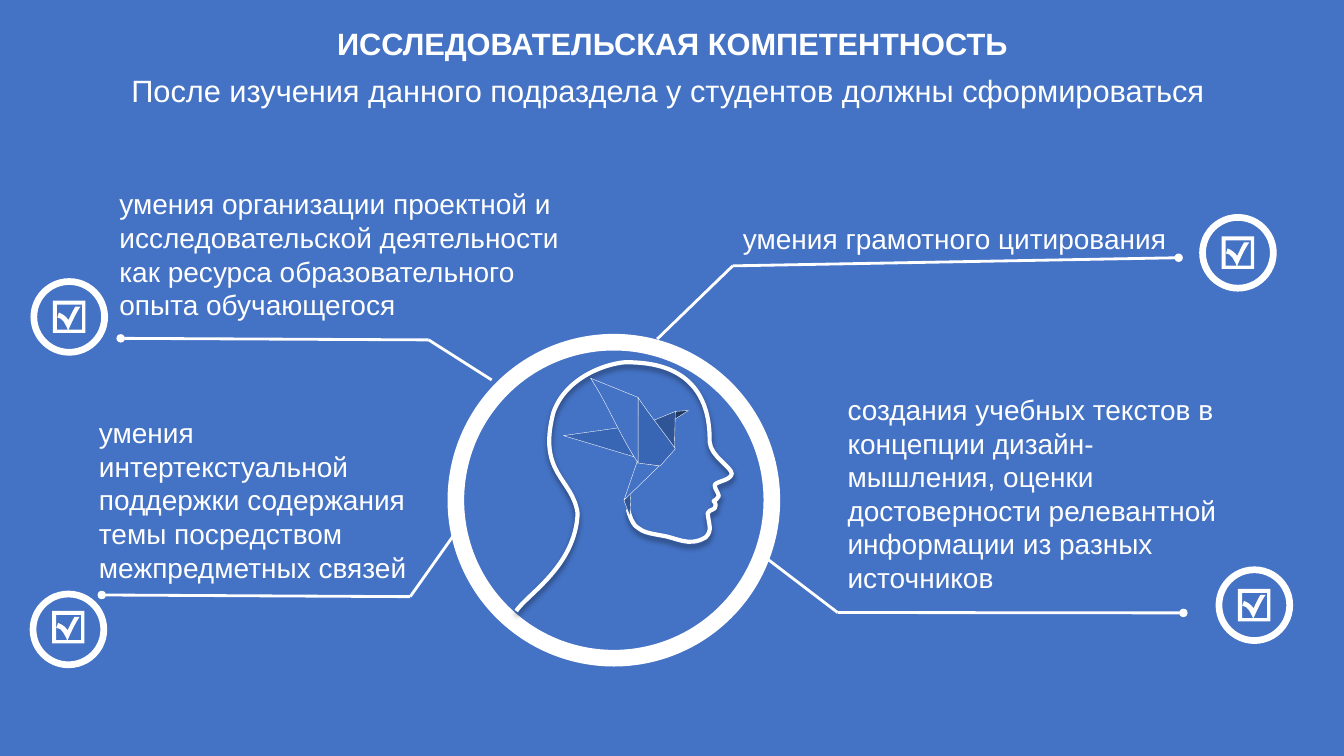
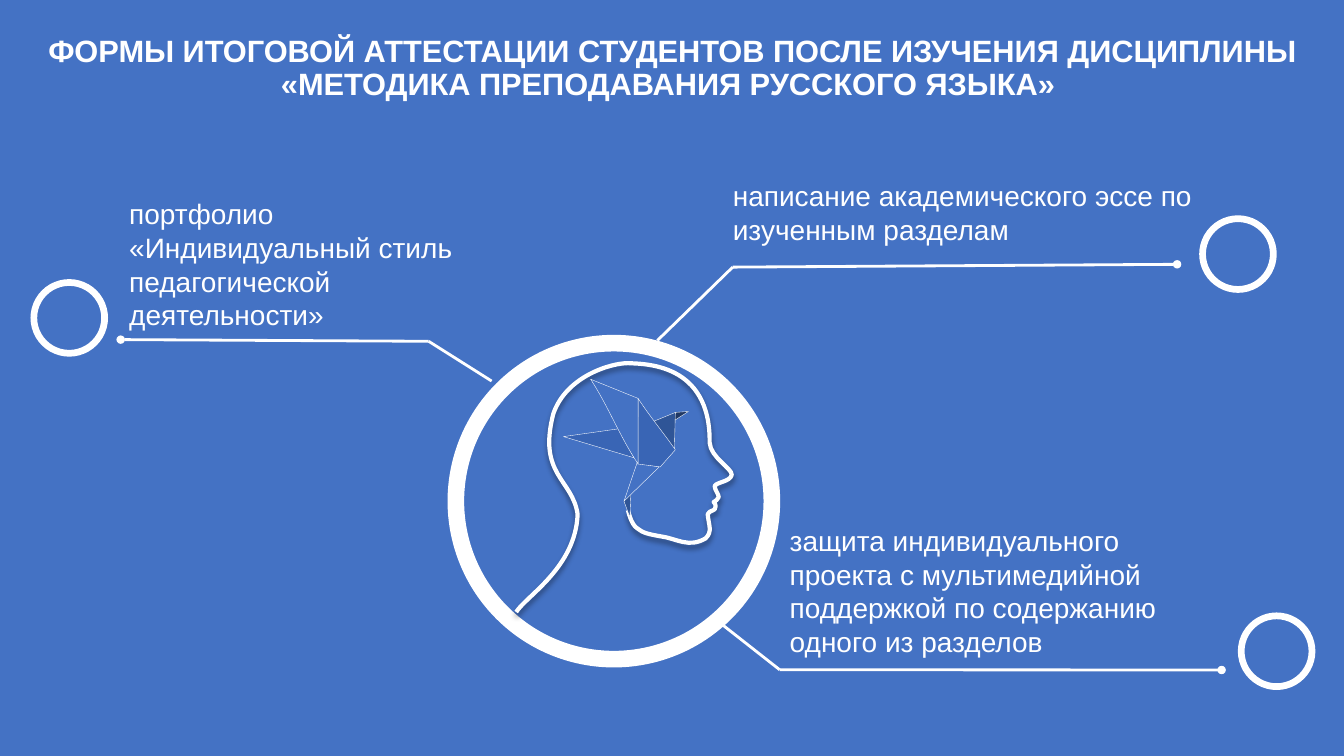
from dataclasses import dataclass
from typing import NamedTuple, Optional

from lxml import etree
from pptx import Presentation
from pptx import util as u
from pptx.dml import color
from pptx.enum import shapes as es
from pptx.enum import text as et
from pptx.oxml import ns


@dataclass(frozen=True)
class Theme:
    back: str = "4472C4"
    ink: str = "FFFFFF"
    mid: str = "3965B5"
    dark: str = "2F5597"
    deep: str = "203864"
    font: str = "Arial"
    title_size: float = 22
    body_size: float = 20
    leader_width: float = 2
    head_width: float = 3
    facet_width: float = 0.25


class Point(NamedTuple):
    x: float
    y: float


class Box(NamedTuple):
    left: float
    top: float
    width: float
    height: float


class Leader(NamedTuple):
    dot: Point
    elbow: Point
    end: Point


class Facet(NamedTuple):
    fill: str
    points: list


@dataclass(frozen=True)
class Item:
    text: str
    box: Box
    leader: Leader
    badge: Point
    check_dy: Optional[float] = None  # no check mark when None


@dataclass(frozen=True)
class Page:
    title: list  # (text, bold) per paragraph
    ring_top: float
    items: list


THEME = Theme()
TITLE_BOX = Box(20.9, 6.2, 918.7, 86.4)
RING_LEFT, RING_SIZE, RING_BAND = 319.7, 237.6, 0.05
BADGE_SIZE, BADGE_BAND, CHECK_DX = 55.4, 0.087, 16

# Outlines: a pair is a line to that point, six numbers are a Bezier curve.
# The head and the bird are measured from the ring's top left corner.
HEAD = [
    (128.9, 125.3), (128.9, 125.3, 131, 135.4, 135.4, 138.2),
    (139.7, 141.8, 144.7, 142.6, 152.6, 144),
    (163.4, 145.4, 172.1, 152.6, 184.3, 145.4),
    (189.4, 140.4, 186.5, 136.1, 185.8, 128.2),
    (187.2, 124.6, 191.5, 126.7, 191.5, 122.4),
    (191.5, 120.2, 190.8, 121, 190.1, 119.5),
    (191.5, 118.1, 193, 118.1, 193.7, 115.9),
    (193.7, 113.8, 190.8, 110.9, 190.8, 108),
    (192.2, 105.1, 201.6, 105.1, 203, 100.1),
    (203, 95, 187.9, 87.8, 187.2, 77),
    (187.9, 19.4, 139.7, 20.9, 128.9, 20.2),
    (116.6, 20.2, 85, 29.5, 75.6, 56.2),
    (64.1, 100.1, 89.3, 103, 92.9, 128.2),
    (91.4, 166.3, 56.2, 186.5, 49, 198),
]
BIRD = [
    Facet(THEME.dark, [(131, 112.3), (130.3, 130.3), (126, 118.8)]),
    Facet(THEME.back, [(126, 118.8), (135.4, 91.4), (151.2, 94.3)]),
    Facet(THEME.deep, [(162.7, 55.4), (172.1, 54.7), (162, 61.2)]),
    Facet(THEME.dark, [(146.9, 61.9), (162.7, 55.4), (162, 82.1)]),
    Facet(THEME.mid, [(82.8, 72.7), (123.1, 67), (133.2, 87.8)]),
    Facet(THEME.mid, [(151.9, 94.3), (162.7, 82.1),
                      (154.1, 69.8, 144, 57.6, 136.1, 45.4), (135.4, 92.2)]),
    Facet(THEME.back, [(136.1, 45.4), (102.2, 31.7),
                       (114.5, 50.4, 123.8, 74.2, 136.1, 92.2)]),
]
CHECK_HOLE = [
    (2.9, 2.9), (2.9, 20.9), (10.8, 20.9),
    (9, 17.3, 7.2, 12.2, 3.2, 12.2), (4.3, 8.6),
    (7.9, 10.1, 9.4, 11.5, 11.2, 13.9),
    (13, 10.1, 13.9, 7.9, 16.1, 4.3), (19.8, 4.3),
    (16.6, 8.8, 13.7, 15.1, 11.2, 20.9),
    (20.9, 20.9), (20.9, 2.9),
]
CHECK_FRAME = [(0, 0), (23.2, 0), (23.2, 23.2), (0, 23.2)]

PAGES = [
    Page(
        [("ИССЛЕДОВАТЕЛЬСКАЯ КОМПЕТЕНТНОСТЬ", True),
         ("После изучения данного подраздела у студентов должны сформироваться ", False)],
        238.5,
        [
            Item("умения организации проектной и исследовательской деятельности "
                 "как ресурса образовательного опыта обучающегося",
                 Box(78.2, 129.9, 341.3, 104.4),
                 Leader(Point(86.2, 241.7), Point(306.2, 242.8), Point(351.2, 271.4)),
                 Point(21.8, 198.7), 16),
            Item("умения грамотного цитирования",
                 Box(523.6, 154.4, 388.1, 31.7),
                 Leader(Point(841.9, 184.1), Point(523.4, 189.9), Point(469.4, 242.2)),
                 Point(856.6, 152.9), 16),
            Item("умения интертекстуальной поддержки содержания темы "
                 "посредством межпредметных связей",
                 Box(63.6, 293.4, 257, 128.2),
                 Leader(Point(72.7, 425), Point(293, 426.2), Point(327.6, 377.3)),
                 Point(21.2, 421.9), 14.4),
            Item("создания учебных текстов в концепции дизайн-мышления, оценки "
                 "достоверности релевантной информации из разных источников",
                 Box(598.3, 276.8, 277.9, 152.6),
                 Leader(Point(845.3, 437.8), Point(598.3, 437.5), Point(548.6, 399.6)),
                 Point(868.3, 404.6), 16),
        ],
    ),
    Page(
        [("ФОРМЫ ИТОГОВОЙ АТТЕСТАЦИИ СТУДЕНТОВ ПОСЛЕ ИЗУЧЕНИЯ ДИСЦИПЛИНЫ "
          "«МЕТОДИКА ПРЕПОДАВАНИЯ РУССКОГО ЯЗЫКА» ", True)],
        239.2,
        [
            Item("портфолио «Индивидуальный стиль педагогической деятельности»",
                 Box(85.2, 137.1, 250.6, 104.4),
                 Leader(Point(86.2, 242.6), Point(306.2, 243.8), Point(351.2, 272.2)),
                 Point(21.8, 199.4)),
            Item("написание академического эссе по изученным разделам",
                 Box(516.4, 124.3, 388.1, 55.4),
                 Leader(Point(840.8, 188.8), Point(523.4, 190.8), Point(469.6, 243.2)),
                 Point(856.6, 153.8)),
            Item("защита индивидуального проекта с мультимедийной поддержкой "
                 "по содержанию одного из разделов",
                 Box(557, 370.4, 283, 104.4),
                 Leader(Point(872.6, 478.6), Point(556.9, 478.4), Point(516.2, 446.4)),
                 Point(884.2, 437.5)),
        ],
    ),
]


def rgb(value: str) -> color.RGBColor:
    return color.RGBColor.from_string(value)


def set_all(obj, values: dict) -> None:
    for name, value in values.items():
        setattr(obj, name, value)


def paint(sp, fill: Optional[str], line: Optional[str] = None, width: float = 0) -> None:
    sp.shadow.inherit = False
    if fill:
        sp.fill.solid()
        sp.fill.fore_color.rgb = rgb(fill)
    else:
        sp.fill.background()
    if line:
        sp.line.color.rgb = rgb(line)
        sp.line.width = u.Pt(width)
    else:
        sp.line.fill.background()


def write(p, text: str, size: float, bold: bool = False) -> None:
    r = p.add_run()
    r.text = text
    set_all(r.font, {"name": THEME.font, "size": u.Pt(size), "bold": bold})
    r.font.color.rgb = rgb(THEME.ink)


def bend(sp, origin: Point, parts: list) -> None:
    """Turn the segments that have control points into Bezier curves."""
    outline = sp.element.find(".//" + ns.qn("a:path"))
    nodes = [node for node in outline if node.tag != ns.qn("a:close")]
    for node, part in zip(nodes, parts):
        if len(part) == 2:
            continue
        curve = etree.Element(ns.qn("a:cubicBezTo"))
        for x, y in zip(part[::2], part[1::2]):
            etree.SubElement(curve, ns.qn("a:pt"),
                             x=str(u.Pt(origin.x + x) - sp.left),
                             y=str(u.Pt(origin.y + y) - sp.top))
        outline.replace(node, curve)


def add_outline(s, origin: Point, contours: list, close: bool = True):
    builder = None
    for contour in contours:
        first, *rest = [(u.Pt(origin.x + part[-2]), u.Pt(origin.y + part[-1]))
                        for part in contour]
        if builder is None:
            builder = s.shapes.build_freeform(*first, scale=1.0)
        else:
            builder.move_to(*first)
        builder.add_line_segments(rest, close=close)
    sp = builder.convert_to_shape()
    bend(sp, origin, sum(contours, []))
    return sp


def add_donut(s, at: Point, size: float, band: float) -> None:
    sp = s.shapes.add_shape(es.MSO_SHAPE.DONUT, *map(u.Pt, (*at, size, size)))
    sp.adjustments[0] = band
    paint(sp, THEME.ink)


def add_line(s, begin: Point, end: Point, dot: bool) -> None:
    c = s.shapes.add_connector(es.MSO_CONNECTOR.STRAIGHT, *map(u.Pt, (*begin, *end)))
    c.line.color.rgb = rgb(THEME.ink)
    c.line.width = u.Pt(THEME.leader_width)
    if dot:
        ln = c.element.spPr.find(ns.qn("a:ln"))
        etree.SubElement(ln, ns.qn("a:headEnd"), type="oval")
    etree.SubElement(c.element.spPr, ns.qn("a:effectLst"))


def add_title(s, lines: list) -> None:
    sp = s.shapes.title
    set_all(sp, dict(zip(Box._fields, map(u.Pt, TITLE_BOX))))
    tf = sp.text_frame
    set_all(tf, {"word_wrap": True, "auto_size": et.MSO_AUTO_SIZE.NONE,
                 "vertical_anchor": et.MSO_ANCHOR.MIDDLE})
    for i, (text, bold) in enumerate(lines):
        p = tf.add_paragraph() if i else tf.paragraphs[0]
        set_all(p, {"alignment": et.PP_ALIGN.CENTER, "line_spacing": 0.9,
                    "space_before": u.Pt(10)})
        write(p, text, THEME.title_size, bold)


def add_emblem(s, top: float) -> None:
    corner = Point(RING_LEFT, top)
    add_donut(s, corner, RING_SIZE, RING_BAND)
    head = add_outline(s, corner, [HEAD], close=False)
    paint(head, None, THEME.ink, THEME.head_width)
    # Soft shadow straight below the head line
    effects = head.element.spPr.find(ns.qn("a:effectLst"))
    shadow = etree.SubElement(effects, ns.qn("a:outerShdw"), blurRad=str(u.Pt(4)),
                              dist=str(u.Pt(3)), dir="5400000", rotWithShape="0")
    black = etree.SubElement(shadow, ns.qn("a:srgbClr"), val="000000")
    etree.SubElement(black, ns.qn("a:alpha"), val="40000")
    for facet in BIRD:
        paint(add_outline(s, corner, [facet.points]), facet.fill,
              THEME.ink, THEME.facet_width)


def add_item(s, item: Item) -> None:
    dot, elbow, end = item.leader
    add_line(s, dot, elbow, dot=True)
    add_line(s, elbow, end, dot=False)
    add_donut(s, item.badge, BADGE_SIZE, BADGE_BAND)
    if item.check_dy is not None:
        corner = Point(item.badge.x + CHECK_DX, item.badge.y + item.check_dy)
        paint(add_outline(s, corner, [CHECK_HOLE, CHECK_FRAME]), THEME.ink)
    tf = s.shapes.add_textbox(*map(u.Pt, item.box)).text_frame
    tf.word_wrap = True
    write(tf.paragraphs[0], item.text, THEME.body_size)


def main() -> None:
    prs = Presentation()
    set_all(prs, {"slide_width": u.Pt(960), "slide_height": u.Pt(540)})
    # Shared background
    fill = prs.slide_master.background.fill
    fill.solid()
    fill.fore_color.rgb = rgb(THEME.back)
    for page in PAGES:
        s = prs.slides.add_slide(prs.slide_layouts.get_by_name("Title Only"))
        add_title(s, page.title)
        add_emblem(s, page.ring_top)
        for item in page.items:
            add_item(s, item)
    prs.save("out.pptx")


if __name__ == "__main__":
    main()
